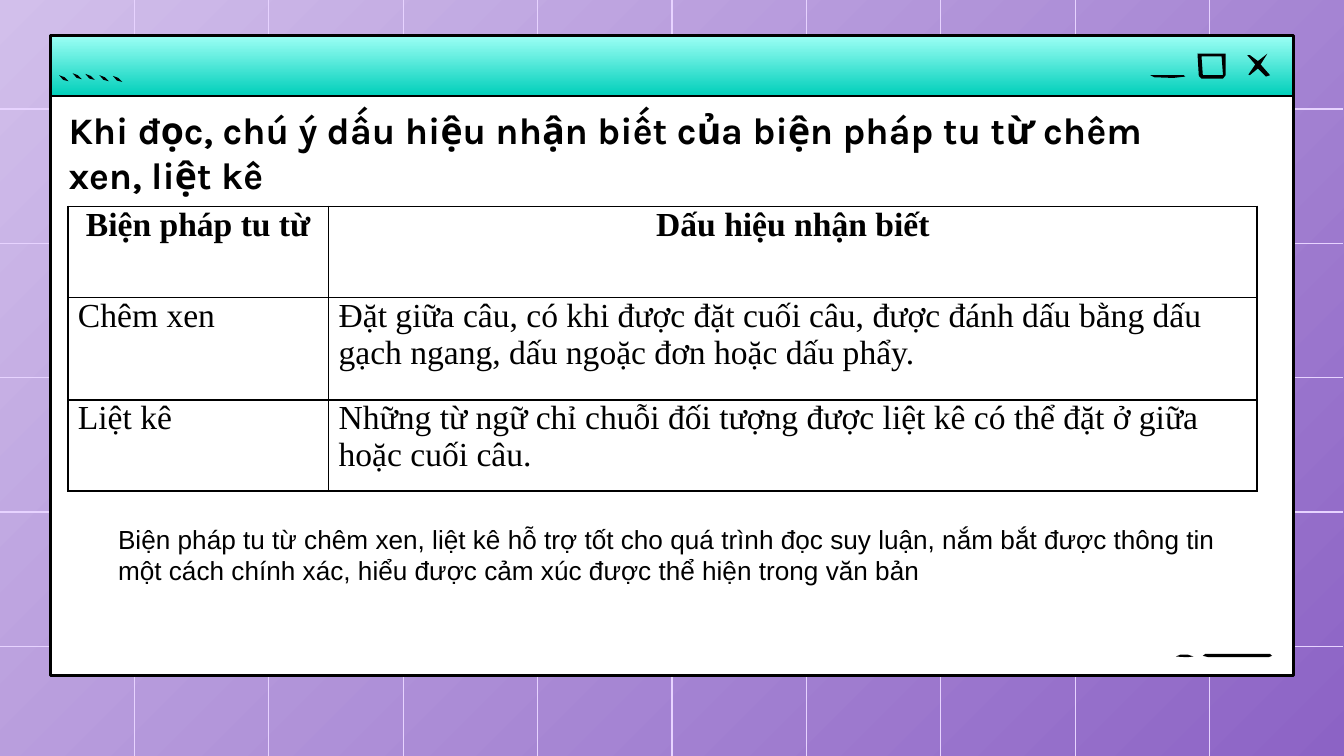
from typing import NamedTuple

from lxml.etree import SubElement
from pptx import Presentation
from pptx.dml.color import RGBColor as RGB
from pptx.enum.shapes import MSO_CONNECTOR as LINK, MSO_SHAPE as SHAPE
from pptx.enum.text import MSO_ANCHOR as ANCHOR, MSO_AUTO_SIZE as FIT, PP_ALIGN as ALIGN
from pptx.oxml.ns import qn
from pptx.util import Pt

PX = 4572  # 200 px to the inch
WIDE, HIGH = 2000, 1125
HEX = {"ink": "000000", "paper": "FFFFFF", "grid": "E7D3FF",
       "lilac": "D2BFEB", "violet": "8C63C5", "mint": "9DFFF5", "teal": "00CFBA"}


class Box(NamedTuple):
    left: int
    top: int
    width: int
    height: int

    def emu(self) -> list[int]:
        return [side * PX for side in self]


class Mark(NamedTuple):
    """A small inked outline of one or more closed rings, in px."""
    rings: list[list[tuple[int, int]]]


class Row(NamedTuple):
    height: int
    device: str
    sign: str


BAR = Box(75, 53, 1850, 90)
PAGE = Box(75, 143, 1850, 863)
TICKS = [(88, 112), (108, 109), (127, 110), (148, 112), (168, 113)]
BUTTONS = [
    Mark([[(1782, 80), (1824, 80), (1824, 112), (1820, 117), (1788, 117), (1784, 113)],
          [(1788, 84), (1790, 112), (1820, 112), (1818, 84)]]),
    Mark([[(1886, 80), (1872, 91), (1860, 82), (1856, 82), (1868, 96), (1858, 111),
           (1860, 112), (1872, 102), (1884, 114), (1890, 112), (1876, 96)]]),
    Mark([[(1712, 112), (1762, 112), (1764, 114), (1746, 116), (1718, 115)]]),
]
DASHES = [
    Mark([[(1794, 973), (1890, 973), (1893, 976), (1888, 978), (1798, 978), (1790, 976)]]),
    Mark([[(1750, 977), (1757, 974), (1767, 974), (1776, 977), (1766, 978)]]),
]

TITLE = "Khi đọc, chú ý dấu hiệu nhận biết của biện pháp tu từ chêm xen, liệt kê"
ROWS = [
    Row(136, "Biện pháp tu từ", "Dấu hiệu nhận biết"),
    Row(152, "Chêm xen", "Đặt giữa câu, có khi được đặt cuối câu, được đánh dấu bằng "
        "dấu gạch ngang, dấu ngoặc đơn hoặc dấu phẩy."),
    Row(136, "Liệt kê", "Những từ ngữ chỉ chuỗi đối tượng được liệt kê có thể đặt ở "
        "giữa hoặc cuối câu."),
]
NOTE = ("Biện pháp tu từ chêm xen, liệt kê hỗ trợ tốt cho quá trình đọc suy luận, "
        "nắm bắt được thông tin một cách chính xác, hiểu được cảm xúc được thể hiện "
        "trong văn bản")


def rgb(name: str) -> RGB:
    return RGB.from_string(HEX[name])


def solid(fill, name: str) -> None:
    fill.solid()
    fill.fore_color.rgb = rgb(name)


def blend(fill, first: str, last: str, angle: int) -> None:
    """Two-stop gradient; the angle runs clockwise."""
    fill.gradient()
    fill.gradient_angle = 360 - angle
    for stop, name in zip(fill.gradient_stops, (first, last)):
        stop.color.rgb = rgb(name)


def draw_line(slide, x1: int, y1: int, x2: int, y2: int) -> None:
    line = slide.shapes.add_connector(LINK.STRAIGHT, x1 * PX, y1 * PX, x2 * PX, y2 * PX)
    line.line.color.rgb = rgb("grid")
    line.line.width = Pt(0.75)
    SubElement(line._element.spPr, qn("a:effectLst"))


def draw_frame(slide, box: Box):
    frame = slide.shapes.add_shape(SHAPE.RECTANGLE, *box.emu())
    frame.shadow.inherit = False
    frame.line.color.rgb = rgb("ink")
    frame.line.width = Pt(1.5)
    return frame


def draw_mark(slide, mark: Mark) -> None:
    pen = slide.shapes.build_freeform(*mark.rings[0][0], scale=PX)
    for ring in mark.rings:
        if ring is not mark.rings[0]:
            pen.move_to(*ring[0])
        pen.add_line_segments(ring[1:], close=True)
    shape = pen.convert_to_shape()
    shape.shadow.inherit = False
    solid(shape.fill, "ink")
    shape.line.fill.background()


def write(frame, text: str, face: str, size: int, bold: bool = False,
          align=ALIGN.LEFT) -> None:
    frame.word_wrap = True
    par = frame.paragraphs[0]
    par.text = text
    par.alignment = align
    font = par.font
    font.name, font.size, font.bold = face, Pt(size), bold
    font.color.rgb = rgb("ink")


def add_edges(cell) -> None:
    props = cell._tc.get_or_add_tcPr()
    for side in ("lnL", "lnR", "lnT", "lnB"):
        edge = SubElement(props, qn(f"a:{side}"), w=str(Pt(1)))
        paint = SubElement(edge, qn("a:solidFill"))
        SubElement(paint, qn("a:srgbClr"), val=HEX["ink"])


def draw_table(slide, left: int, top: int, widths: list[int], rows: list[Row]) -> None:
    box = Box(left, top, sum(widths), sum(row.height for row in rows))
    table = slide.shapes.add_table(len(rows), len(widths), *box.emu()).table
    table.horz_banding = False
    for col, width in zip(table.columns, widths):
        col.width = width * PX
    for i, row in enumerate(rows):
        table.rows[i].height = row.height * PX
        head = i == 0
        for cell, text in zip(table.rows[i].cells, (row.device, row.sign)):
            add_edges(cell)
            cell.fill.background()
            cell.margin_left = cell.margin_right = 15 * PX
            cell.margin_top = cell.margin_bottom = 0
            write(cell.text_frame, text, "Times New Roman", 18, head,
                  ALIGN.CENTER if head else ALIGN.LEFT)


def main() -> None:
    deck = Presentation()
    deck.slide_width, deck.slide_height = WIDE * PX, HIGH * PX
    slide = deck.slides.add_slide(deck.slide_layouts[5])
    blend(slide.background.fill, "lilac", "violet", 45)

    for x in range(200, WIDE, 200):
        draw_line(slide, x, 0, x, HIGH)
    for y in range(162, HIGH, 200):
        draw_line(slide, 0, y, WIDE - 2, y)

    blend(draw_frame(slide, BAR).fill, "mint", "teal", 90)
    for x, y in TICKS:
        draw_mark(slide, Mark([[(x, y), (x + 8, y + 3), (x + 14, y + 9), (x + 6, y + 7)]]))
    for mark in BUTTONS:
        draw_mark(slide, mark)
    solid(draw_frame(slide, PAGE).fill, "paper")
    for mark in DASHES:
        draw_mark(slide, mark)

    title = slide.shapes.title
    title.left, title.top, title.width, title.height = Box(82, 139, 1738, 146).emu()
    frame = title.text_frame
    frame.auto_size = FIT.NONE
    frame.vertical_anchor = ANCHOR.TOP
    frame.margin_left = frame.margin_right = 20 * PX
    frame.margin_top = frame.margin_bottom = 20 * PX
    write(frame, TITLE, "Karla", 20, bold=True)
    # The title sits in front of the window frames.
    slide.shapes._spTree.append(title._element)

    draw_table(slide, 101, 307, [388, 1382], ROWS)

    note = slide.shapes.add_textbox(*Box(156, 769, 1682, 114).emu()).text_frame
    note.auto_size = FIT.SHAPE_TO_FIT_TEXT
    write(note, NOTE, "Arial", 14)

    deck.save("out.pptx")


if __name__ == "__main__":
    main()
